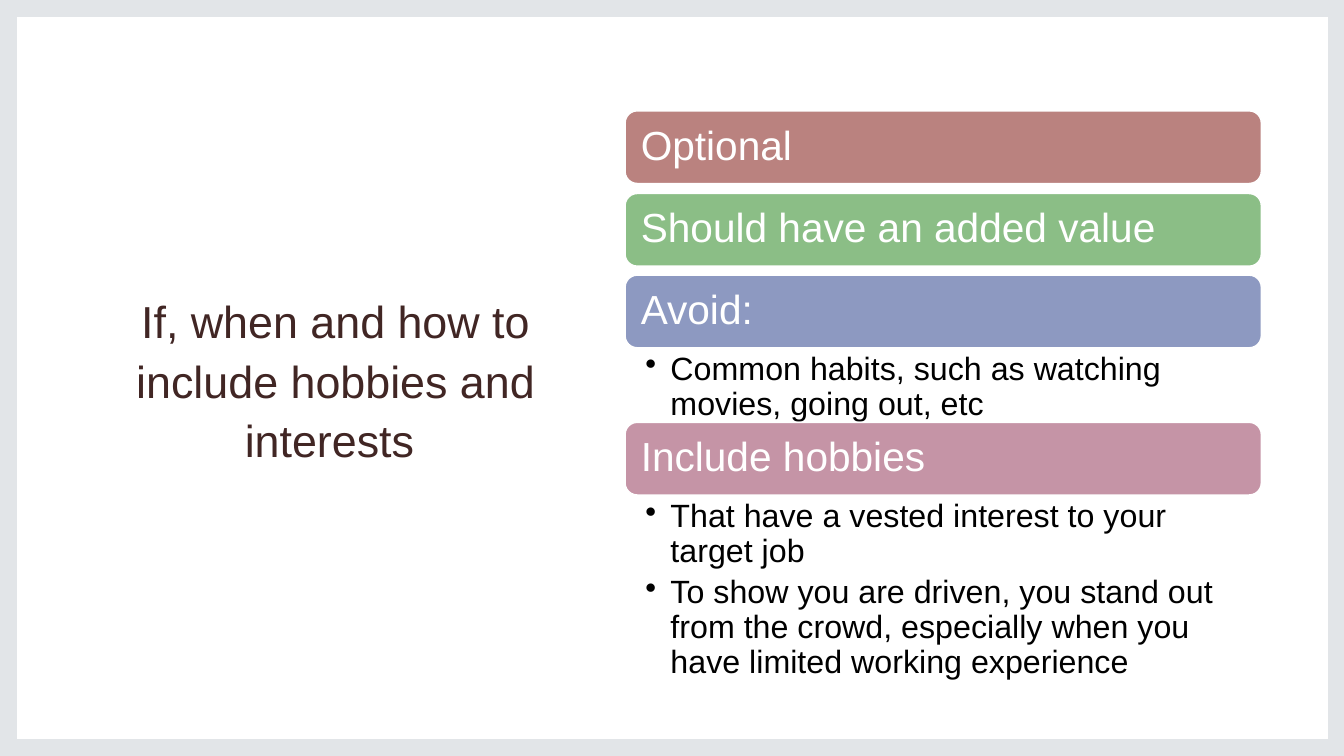
"""Build a slide on when and how to include hobbies and interests."""
from dataclasses import dataclass

from lxml.etree import SubElement
from pptx import Presentation
from pptx.dml.color import RGBColor
from pptx.enum.shapes import MSO_SHAPE
from pptx.enum.text import MSO_ANCHOR, PP_ALIGN
from pptx.oxml.ns import qn
from pptx.util import Inches, Pt


@dataclass(frozen=True)
class Theme:
    font: str = "Arial"
    frame: str = "E2E5E8"
    white: str = "FFFFFF"
    black: str = "000000"
    title: str = "412624"
    bars: tuple = ("BA827F", "8BBE86", "8D99C1", "C594A6")
    title_size: int = 32
    bar_size: int = 29
    bullet_size: int = 23


theme = Theme()


def write(sp, *lines, size, color, align=PP_ALIGN.LEFT, anchor=MSO_ANCHOR.MIDDLE,
          spacing=0.9, after=0, insets=(0.1, 0.05, 0.1, 0.05), bullet=False):
    tf = sp.text_frame
    tf.word_wrap = True
    tf.vertical_anchor = anchor
    tf.margin_left, tf.margin_top, tf.margin_right, tf.margin_bottom = map(Inches, insets)
    for i, line in enumerate(lines):
        p = tf.add_paragraph() if i else tf.paragraphs[0]
        p.alignment = align
        p.line_spacing = spacing
        p.space_after = Pt(after)
        if bullet:
            pPr = p._p.get_or_add_pPr()
            pPr.set("marL", str(Inches(0.25)))
            pPr.set("indent", str(Inches(-0.25)))
            SubElement(pPr, qn("a:buChar"), char="•")
        r = p.add_run()
        r.text = line
        r.font.name = theme.font
        r.font.size = Pt(size)
        r.font.color.rgb = RGBColor.from_string(color)


def add_box(kind, left, top, width, height, fill):
    sp = slide.shapes.add_shape(kind, Inches(left), Inches(top), Inches(width), Inches(height))
    sp.shadow.inherit = False
    sp.fill.solid()
    sp.fill.fore_color.rgb = RGBColor.from_string(fill)
    sp.line.fill.background()
    return sp


prs = Presentation()
prs.slide_width = Inches(13.33)
prs.slide_height = Inches(7.5)
slide = prs.slides.add_slide(prs.slide_layouts[6])

add_box(MSO_SHAPE.RECTANGLE, 0, 0, 13.33, 7.5, theme.frame)
add_box(MSO_SHAPE.RECTANGLE, 0.17, 0.17, 13, 7.16, theme.white)

title = slide.shapes.add_textbox(Inches(1.12), Inches(1.12), Inches(4.42), Inches(5.25))
write(title, "If, when and how to include hobbies and interests ",
      size=theme.title_size, color=theme.title, align=PP_ALIGN.CENTER, spacing=1.1)

LEFT, WIDTH, BAR_HEIGHT = 6.2, 6.31, 0.72
sections = [
    (1.1, "Optional", [], 0),
    (1.92, "Should have an added value", [], 0),
    (2.73, "Avoid:", ["Common habits, such as watching movies, going out, etc"], 0.74),
    (4.19, "Include hobbies", [
        "That have a vested interest to your target job",
        "To show you are driven, you stand out from the crowd, "
        "especially when you have limited working experience",
    ], 1.48),
]

for (top, heading, bullets, height), fill in zip(sections, theme.bars):
    bar = add_box(MSO_SHAPE.ROUNDED_RECTANGLE, LEFT, top, WIDTH, BAR_HEIGHT, fill)
    bar.line.color.rgb = RGBColor.from_string(theme.white)
    bar.line.width = Pt(1)
    write(bar, heading, size=theme.bar_size, color=theme.white, insets=(0.12, 0.12, 0.12, 0.12))
    if bullets:
        notes = slide.shapes.add_textbox(Inches(LEFT), Inches(top + BAR_HEIGHT + 0.01),
                                         Inches(WIDTH), Inches(height))
        write(notes, *bullets, size=theme.bullet_size, color=theme.black, after=4.6,
              anchor=MSO_ANCHOR.TOP, insets=(0.2, 0.04, 0.23, 0.04), bullet=True)

prs.save("out.pptx")
